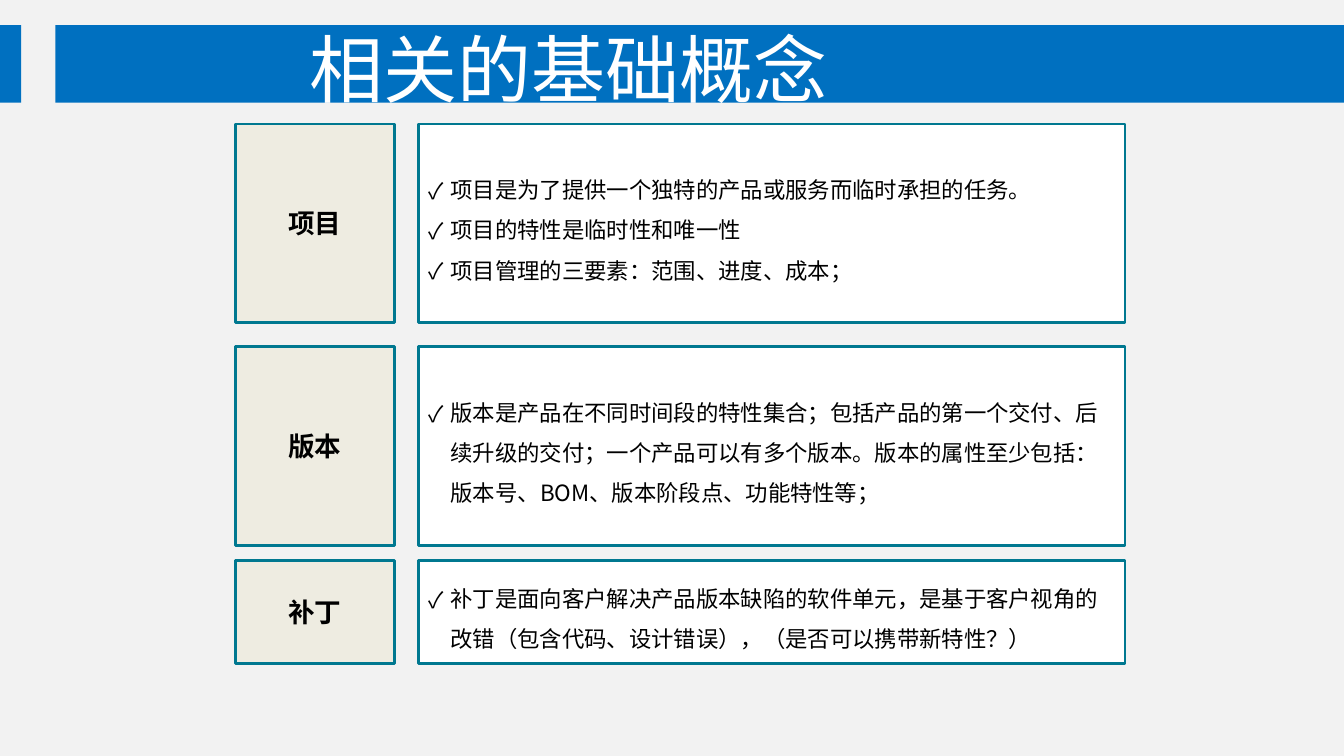
from lxml import etree
from pptx import Presentation
from pptx import util as u
from pptx.dml.color import RGBColor
from pptx.enum import shapes, text
from pptx.oxml.ns import qn

CONCEPTS = [
    # label, top and height in percent of the slide, statements
    ("项目", 16.4, 26.27, [
        "项目是为了提供一个独特的产品或服务而临时承担的任务。",
        "项目的特性是临时性和唯一性",
        "项目管理的三要素：范围、进度、成本；",
    ]),
    ("版本", 45.87, 26.27, [
        "版本是产品在不同时间段的特性集合；包括产品的第一个交付、后续升级的交付；"
        "一个产品可以有多个版本。版本的属性至少包括：版本号、BOM、版本阶段点、功能特性等；",
    ]),
    ("补丁", 74.13, 13.6, [
        "补丁是面向客户解决产品版本缺陷的软件单元，是基于客户视角的改错"
        "（包含代码、设计错误），（是否可以携带新特性？）",
    ]),
]
LABEL_COLUMN = (17.55, 11.78)  # left and width in percent
LIST_COLUMN = (31.13, 52.58)
BANNER_ROW = (3.33, 10.27)  # top and height in percent


def rgb(hex_code):
    return RGBColor.from_string(hex_code)


class ConceptSlide:
    """Holds the style and the slide; all places are percentages of its size."""

    FONT = "Noto Sans CJK SC"
    BLUE, TEAL, BEIGE = "0070C0", "007890", "EEECE1"
    WHITE, BLACK, GREY = "FFFFFF", "000000", "F2F2F2"

    def __init__(self, deck, layout):
        self.width, self.height = deck.slide_width, deck.slide_height
        self.slide = deck.slides.add_slide(layout)
        background = self.slide.background.fill
        background.solid()
        background.fore_color.rgb = rgb(self.GREY)

    def box(self, column, row):
        """Turn (left, width) and (top, height) into left, top, width, height."""
        (left, width), (top, height) = column, row
        return (int(self.width * left / 100), int(self.height * top / 100),
                int(self.width * width / 100), int(self.height * height / 100))

    def place(self, holder, column, row):
        holder.left, holder.top, holder.width, holder.height = self.box(column, row)

    def paint(self, panel, fill, outlined=True):
        panel.fill.solid()
        panel.fill.fore_color.rgb = rgb(fill)
        if outlined:
            panel.line.color.rgb = rgb(self.TEAL)
            panel.line.width = u.Pt(2)
        else:
            panel.line.fill.background()

    def set_lines(self, holder, lines, size, color, bold=False,
                  align=text.PP_ALIGN.CENTER):
        frame = holder.text_frame
        frame.text = "\n".join(lines)
        frame.word_wrap = True
        frame.auto_size = text.MSO_AUTO_SIZE.NONE
        frame.vertical_anchor = text.MSO_ANCHOR.MIDDLE
        for paragraph in frame.paragraphs:
            paragraph.alignment = align
            for run in paragraph.runs:
                run.font.size, run.font.bold = u.Pt(size), bold
                run.font.color.rgb = rgb(color)
                run.font.name = self.FONT
                etree.SubElement(run.font._element, qn("a:ea"), typeface=self.FONT)

    def block(self, column, row, fill, outlined=True):
        panel = self.slide.shapes.add_shape(
            shapes.MSO_SHAPE.RECTANGLE, *self.box(column, row))
        panel.shadow.inherit = False
        self.paint(panel, fill, outlined)
        return panel

    def banner(self, heading):
        for column in ((4.13, 95.87), (-0.23, 1.8)):
            self.block(column, BANNER_ROW, self.BLUE, outlined=False)
        title = self.slide.shapes.title
        self.place(title, (0, 84.6), (5.33, 7.2))
        self.set_lines(title, [heading], 52.8, self.WHITE)
        self.slide.shapes._spTree.append(title._element)  # in front of the banner

    def label(self, name, row):
        panel = self.block(LABEL_COLUMN, row, self.BEIGE)
        self.set_lines(panel, [name], 19, self.BLACK, bold=True)

    def checklist(self, body, statements, row):
        self.place(body, LIST_COLUMN, row)
        self.paint(body, self.WHITE)
        self.set_lines(body, statements, 16, self.BLACK, align=text.PP_ALIGN.LEFT)
        for paragraph in body.text_frame.paragraphs:
            paragraph.line_spacing = 1.5
            paragraph.space_before = u.Pt(0)
            properties = paragraph._p.get_or_add_pPr()
            properties.set("marL", str(u.Inches(0.22)))
            properties.set("indent", str(-u.Inches(0.22)))
            etree.SubElement(properties, qn("a:buFont"), typeface=self.FONT)
            etree.SubElement(properties, qn("a:buChar"), char="✓")


def main():
    deck = Presentation()
    deck.slide_width, deck.slide_height = u.Inches(13.33), u.Inches(7.5)
    page = ConceptSlide(deck, deck.slide_layouts.get_by_name("Comparison"))
    page.banner("相关的基础概念")

    bodies = [holder for holder in page.slide.placeholders
              if holder.placeholder_format.idx > 0]
    for body, (name, top, height, statements) in zip(bodies, CONCEPTS):
        page.label(name, (top, height))
        page.checklist(body, statements, (top, height))
    for unused in bodies[len(CONCEPTS):]:
        unused._element.getparent().remove(unused._element)

    deck.save("out.pptx")


if __name__ == "__main__":
    main()
